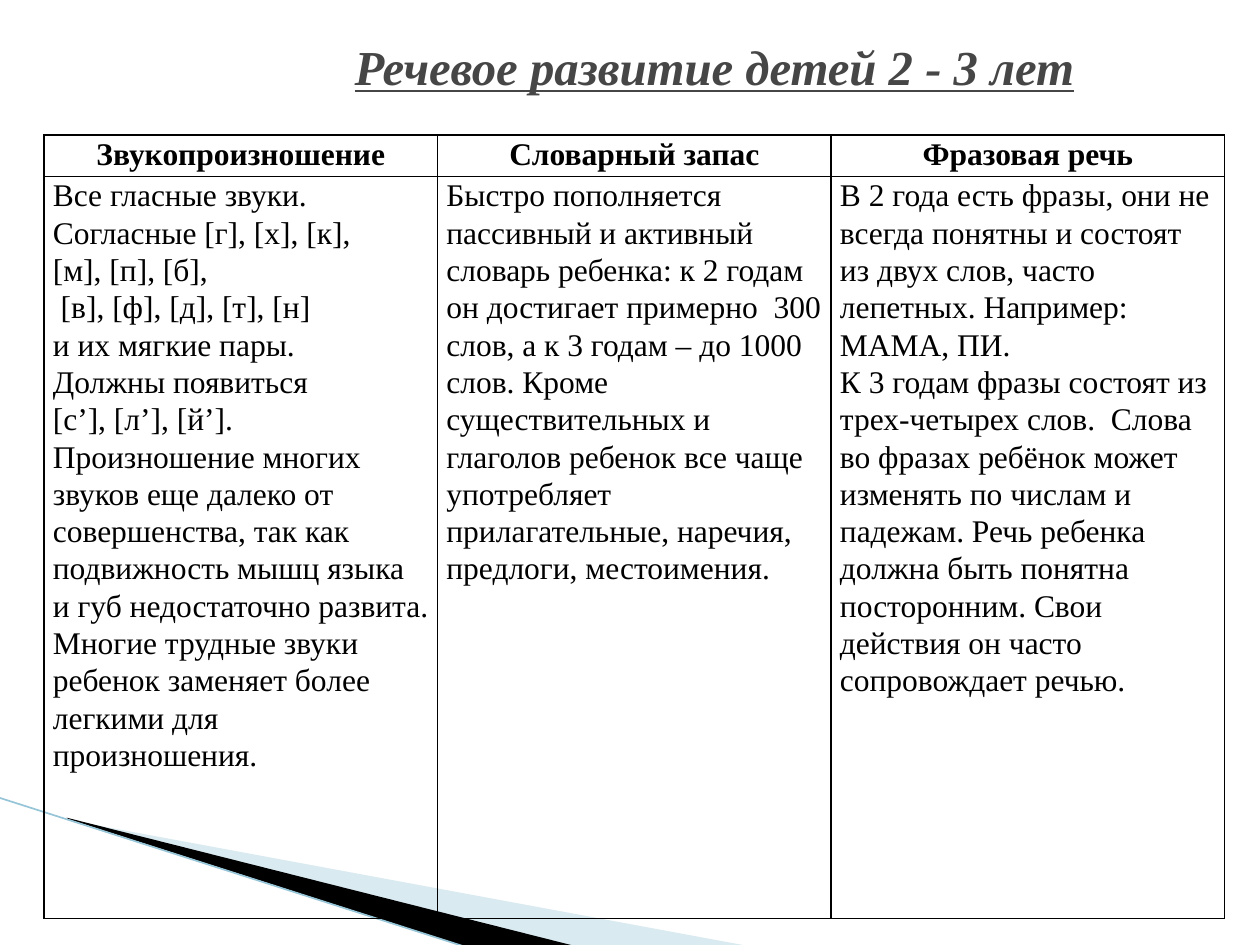
from typing import NamedTuple

from lxml import etree
from pptx import Presentation
from pptx.dml.color import RGBColor
from pptx.enum.shapes import MSO_CONNECTOR
from pptx.enum.text import MSO_ANCHOR, PP_ALIGN
from pptx.oxml.ns import qn
from pptx.util import Inches, Pt

BLACK = RGBColor(0x00, 0x00, 0x00)
GREY = RGBColor(0x46, 0x46, 0x46)
PALE = RGBColor(0xA0, 0xCB, 0xDC)
SKY = RGBColor(0x97, 0xC5, 0xD8)
FONT = "Times New Roman"
CENTER, LEFT = PP_ALIGN.CENTER, PP_ALIGN.LEFT
MIDDLE = MSO_ANCHOR.MIDDLE
STRAIGHT = MSO_CONNECTOR.STRAIGHT


class Wedge(NamedTuple):
    points: list[tuple[float, float]]
    color: RGBColor
    alpha: int


class Column(NamedTuple):
    head: str
    body: list[str]


WEDGES = [
    Wedge([(0.55, 6.51), (5.95, 7.51), (4.56, 7.51), (0.55, 6.5)], PALE, 40),
    Wedge([(0.53, 6.49), (4.57, 7.51), (3.72, 7.52), (0.54, 6.5)], BLACK, 100),
]
COLUMNS = [
    Column("Звукопроизношение", [
        "Все гласные звуки.",
        "Согласные [г], [х], [к],",
        "[м], [п], [б],",
        " [в], [ф], [д], [т], [н]",
        "и их мягкие пары.",
        "Должны появиться",
        "[с’], [л’], [й’].",
        "Произношение многих звуков еще далеко от совершенства, так как "
        "подвижность мышц языка и губ недостаточно развита. Многие трудные "
        "звуки ребенок заменяет более легкими для произношения.",
    ]),
    Column("Словарный запас", [
        "Быстро пополняется пассивный и активный словарь ребенка: "
        "к 2 годам он достигает примерно  300 слов, а к 3 годам – до 1000 "
        "слов. Кроме существительных и глаголов ребенок все чаще "
        "употребляет прилагательные, наречия, предлоги, местоимения.",
    ]),
    Column("Фразовая речь", [
        "В 2 года есть фразы, они не всегда понятны и состоят из двух слов, "
        "часто лепетных. Например: МАМА, ПИ.",
        "К 3 годам фразы состоят из трех-четырех слов.  Слова во фразах "
        "ребёнок может изменять по числам и падежам. Речь ребенка должна "
        "быть понятна посторонним. Свои действия он часто сопровождает речью.",
    ]),
]


def add_wedge(slide, wedge: Wedge) -> None:
    dots = [(Inches(x), Inches(y)) for x, y in wedge.points]
    pen = slide.shapes.build_freeform(*dots[0])
    pen.add_line_segments(dots[1:], close=True)
    shape = pen.convert_to_shape()
    shape.shadow.inherit = False
    shape.line.fill.background()
    shape.fill.solid()
    shape.fill.fore_color.rgb = wedge.color
    if wedge.alpha < 100:
        tone = shape.fill._xPr.find(".//" + qn("a:srgbClr"))
        etree.SubElement(tone, qn("a:alpha"), val=str(wedge.alpha * 1000))


def add_edge(slide) -> None:
    edge = slide.shapes.add_connector(
        STRAIGHT, Inches(-0.01), Inches(6.33), Inches(3.71), Inches(7.52))
    edge.line.color.rgb = SKY
    edge.line.width = Pt(0.95)
    etree.SubElement(edge._element.spPr, qn("a:effectLst"))


def add_run(para, text: str, size: float, color: RGBColor, bold: bool):
    run = para.add_run()
    run.text = text
    font = run.font
    font.name, font.size, font.bold = FONT, Pt(size), bold
    font.color.rgb = color
    return run


def add_title(slide) -> None:
    box = slide.shapes.add_textbox(
        Inches(1.57), Inches(0.2), Inches(8.2), Inches(0.65))
    frame = box.text_frame
    frame.word_wrap = True
    frame.vertical_anchor = MIDDLE
    para = frame.paragraphs[0]
    para.alignment = CENTER
    run = add_run(para, "Речевое развитие детей 2 - 3 лет", 27.9, GREY, True)
    run.font.italic = run.font.underline = True


def add_borders(cell) -> None:
    props = cell._tc.get_or_add_tcPr()
    for spot, side in enumerate(("a:lnL", "a:lnR", "a:lnT", "a:lnB")):
        line = etree.Element(qn(side), w=str(Pt(1)))
        fill = etree.SubElement(line, qn("a:solidFill"))
        etree.SubElement(fill, qn("a:srgbClr"), val=str(BLACK))
        props.insert(spot, line)


def fill_cell(cell, lines: list[str], align: PP_ALIGN, bold: bool) -> None:
    cell.margin_left = cell.margin_right = Inches(0.07)
    cell.margin_top = cell.margin_bottom = 0
    cell.fill.background()
    add_borders(cell)
    frame = cell.text_frame
    for spot, text in enumerate(lines):
        para = frame.add_paragraph() if spot else frame.paragraphs[0]
        para.alignment = align
        para.line_spacing = 1.07
        add_run(para, text, 18, BLACK, bold)


def add_grid(slide) -> None:
    table = slide.shapes.add_table(
        2, len(COLUMNS), Inches(0.35), Inches(1.07),
        Inches(9.37), Inches(6.22)).table
    table.rows[0].height = Inches(0.33)
    table.rows[1].height = Inches(5.89)
    for spot, column in enumerate(COLUMNS):
        fill_cell(table.cell(0, spot), [column.head], CENTER, True)
        fill_cell(table.cell(1, spot), column.body, LEFT, False)


def main() -> None:
    deck = Presentation()
    deck.slide_width, deck.slide_height = Inches(10), Inches(7.5)
    slide = deck.slides.add_slide(deck.slide_layouts[6])
    for wedge in WEDGES:
        add_wedge(slide, wedge)
    add_edge(slide)
    add_title(slide)
    add_grid(slide)
    deck.save("out.pptx")


if __name__ == "__main__":
    main()
